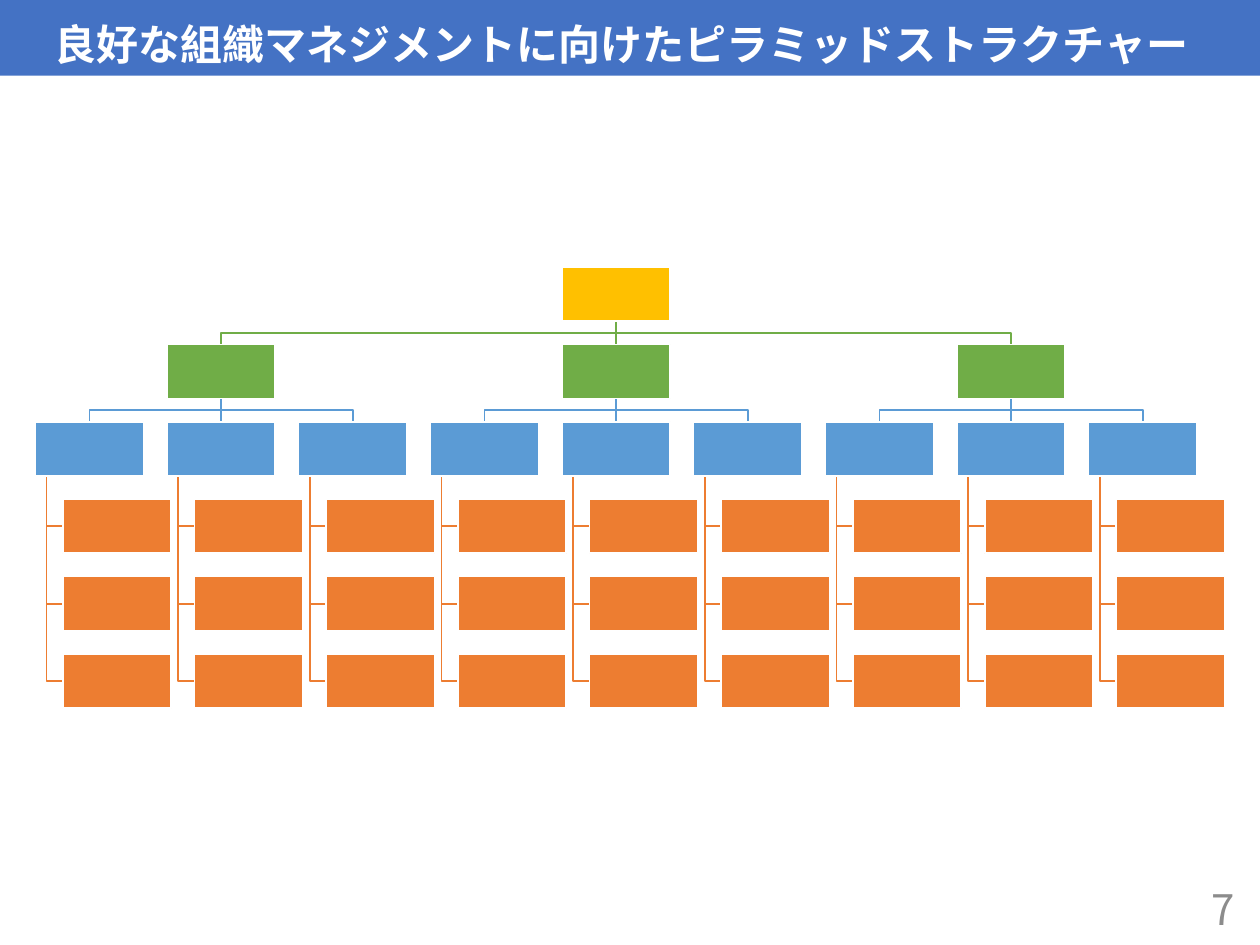
from lxml import etree
from pptx import Presentation
from pptx.dml.color import RGBColor
from pptx.enum import shapes as kinds, text
from pptx.oxml.ns import qn
from pptx.util import Inches, Pt

FONT = "Noto Sans CJK JP"
WHITE = RGBColor(0xFF, 0xFF, 0xFF)
GRAY = RGBColor(0x8C, 0x8C, 0x8C)
BLUE = RGBColor(0x44, 0x72, 0xC4)
GOLD = RGBColor(0xFF, 0xC0, 0x00)
GREEN = RGBColor(0x70, 0xAD, 0x47)
SKY = RGBColor(0x5B, 0x9B, 0xD5)
ORANGE = RGBColor(0xED, 0x7D, 0x31)

BOX_W, BOX_H = Inches(0.86), Inches(0.43)
INDENT = Inches(0.22)  # shift of the lowest boxes to the right
STEM = Inches(0.09)    # from a box's left side to the line below it
BRANCH = 3             # children under each box


def write(frame, words, color, align, bold=False):
    frame.text = words
    frame.word_wrap = True
    frame.auto_size = text.MSO_AUTO_SIZE.NONE
    para = frame.paragraphs[0]
    para.alignment = align
    font = para.font
    font.name, font.size, font.bold = FONT, Pt(24), bold
    font.color.rgb = color
    props = para._p.pPr.find(qn("a:defRPr"))
    etree.SubElement(props, qn("a:ea"), typeface=FONT)


def add_title(slide, left, top, width, height):
    title = slide.shapes.title
    title.left, title.top, title.width, title.height = left, top, width, height
    title.fill.solid()
    title.fill.fore_color.rgb = BLUE
    frame = title.text_frame
    write(frame, "　良好な組織マネジメントに向けたピラミッドストラクチャー",
          WHITE, text.PP_ALIGN.LEFT, bold=True)
    frame.vertical_anchor = text.MSO_ANCHOR.BOTTOM
    frame.paragraphs[0].line_spacing = 0.9


def add_number(slide, left, top, width, height):
    frame = slide.shapes.add_textbox(left, top, width, height).text_frame
    write(frame, "7", GRAY, text.PP_ALIGN.RIGHT)
    frame.vertical_anchor = text.MSO_ANCHOR.MIDDLE


def add_box(group, left, top, color):
    box = group.shapes.add_shape(
        kinds.MSO_SHAPE.RECTANGLE, left, top, BOX_W, BOX_H)
    box.shadow.inherit = False
    box.fill.solid()
    box.fill.fore_color.rgb = color
    box.line.color.rgb = WHITE
    box.line.width = Pt(1)
    return box


def bend(group, points, color):
    """Draw an open angled line through the points."""
    pen = group.shapes.build_freeform(*points[0], scale=1.0)
    pen.add_line_segments(points[1:], close=False)
    line = pen.convert_to_shape()
    line.shadow.inherit = False
    line.fill.background()
    line.line.color.rgb = color
    line.line.width = Pt(1)


def link(group, upper, lower, color):
    """Join a box's bottom to the top of a box in the row below."""
    x1, y1 = upper.left + BOX_W // 2, upper.top + BOX_H
    x2, y2 = lower.left + BOX_W // 2, lower.top
    if x1 != x2:
        mid = (y1 + y2) // 2
        bend(group, [(x1, y1), (x1, mid), (x2, mid), (x2, y2)], color)
        return
    line = group.shapes.add_connector(
        kinds.MSO_CONNECTOR.STRAIGHT, x1, y1, x2, y2)
    line.begin_connect(upper, 2)
    line.end_connect(lower, 0)
    line.line.color.rgb = color
    line.line.width = Pt(1)
    etree.SubElement(line._element.spPr, qn("a:effectLst"))


def add_pyramid(slide, left, top, width, height):
    lines = slide.shapes.add_group_shape()
    boxes = slide.shapes.add_group_shape()
    cols = BRANCH ** 2
    gap_x = (width - BOX_W - INDENT) / (cols - 1)
    gap_y = (height - BOX_H) / (BRANCH + 2)

    def place(col, row, color, shift=0):
        return add_box(boxes, round(left + col * gap_x) + shift,
                       round(top + row * gap_y), color)

    root = place(cols // 2, 0, GOLD)
    for part in range(BRANCH):
        first = part * BRANCH
        head = place(first + BRANCH // 2, 1, GREEN)
        link(lines, root, head, GREEN)
        for col in range(first, first + BRANCH):
            unit = place(col, 2, SKY)
            link(lines, head, unit, SKY)
            x, y = unit.left + STEM, unit.top + BOX_H
            for row in range(3, 3 + BRANCH):
                leaf = place(col, row, ORANGE, INDENT)
                mid = leaf.top + BOX_H // 2
                bend(lines, [(x, y), (x, mid), (leaf.left, mid)], ORANGE)


def main():
    deck = Presentation()
    deck.slide_width, deck.slide_height = Inches(10), Inches(7.5)
    slide = deck.slides.add_slide(deck.slide_layouts[5])
    add_title(slide, 0, 0, deck.slide_width, Inches(0.6))
    add_number(slide, Inches(7.65), Inches(7.01), Inches(2.25), Inches(0.4))
    add_pyramid(slide, Inches(0.28), Inches(2.12), Inches(9.44), Inches(3.5))
    deck.save("out.pptx")


if __name__ == "__main__":
    main()
